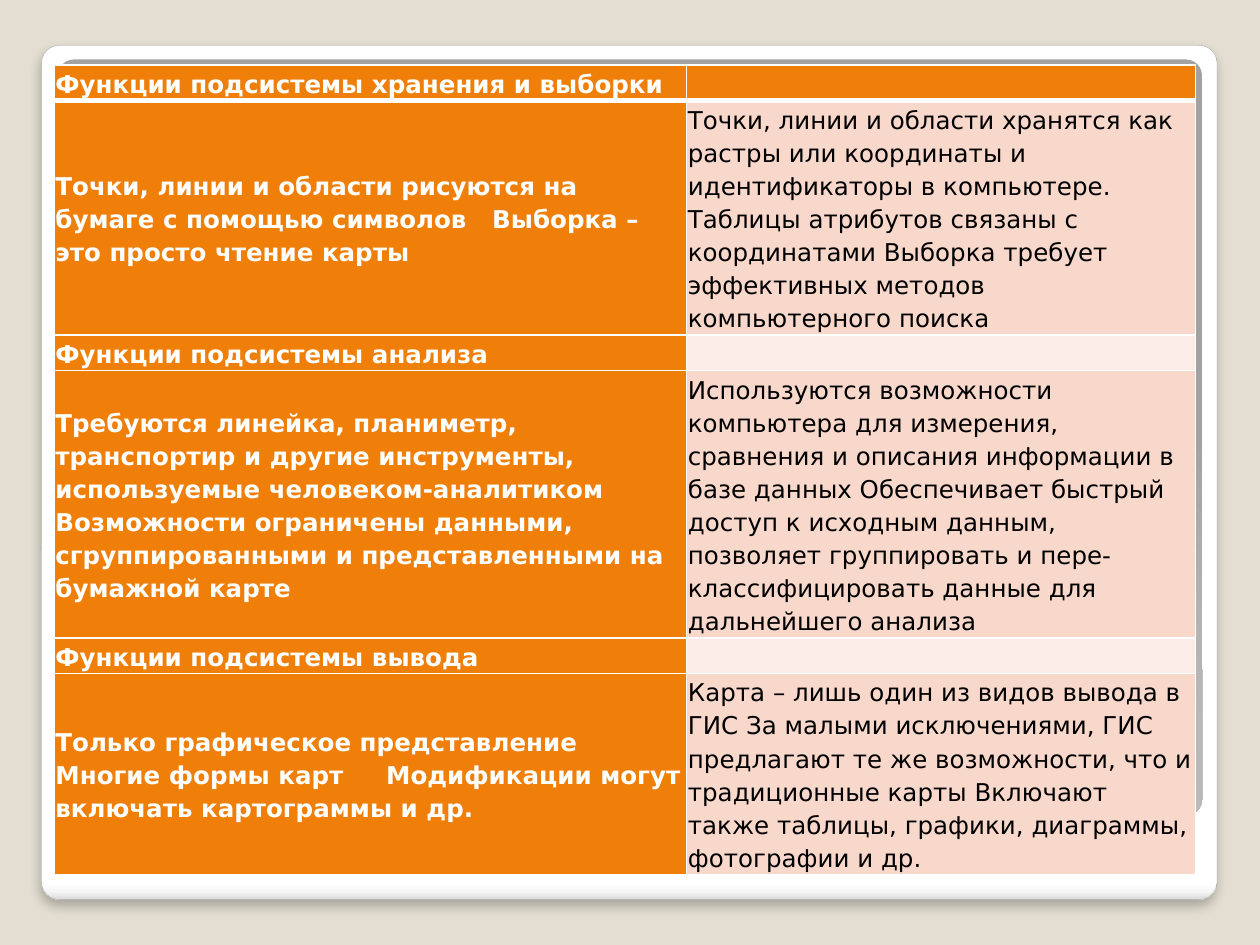
from lxml import etree
from pptx import Presentation
from pptx.dml.color import RGBColor
from pptx.enum.shapes import MSO_SHAPE
from pptx.enum.text import MSO_ANCHOR
from pptx.oxml import parse_xml
from pptx.oxml.ns import nsdecls, qn
from pptx.util import Inches, Pt

ROUND_RECT = MSO_SHAPE.ROUNDED_RECTANGLE
MIDDLE = MSO_ANCHOR.MIDDLE
BLANK_LAYOUT = 6
WIDTH, HEIGHT = 10, 7.5

SAND, ORANGE, ROSE, PALE = "E3DED1", "F07F09", "F9D8CC", "FCECE7"
WHITE, BLACK, GREY = "FFFFFF", "000000", "A4A4A4"

COLUMNS = [5.02, 4.04]
ROWS = [
    (0.27, "Функции подсистемы хранения и выборки", ""),
    (1.85, "Точки, линии и области рисуются на бумаге с помощью символов   Выборка – это "
           "просто чтение карты",
     "Точки, линии и области хранятся как растры или координаты и идентификаторы в "
     "компьютере. Таблицы атрибутов связаны с координатами Выборка требует эффективных "
     "методов компьютерного поиска"),
    (0.27, "Функции подсистемы анализа", ""),
    (2.11, "Требуются линейка, планиметр, транспортир и другие инструменты, используемые "
           "человеком-аналитиком Возможности ограничены данными, сгруппированными и "
           "представленными на бумажной карте",
     "Используются возможности компьютера для измерения, сравнения и описания информации "
     "в базе данных Обеспечивает быстрый доступ к исходным данным, позволяет группировать "
     "и пере-классифицировать данные для дальнейшего анализа"),
    (0.27, "Функции подсистемы вывода", ""),
    (1.58, "Только графическое представление Многие формы карт     Модификации могут "
           "включать картограммы и др.",
     "Карта – лишь один из видов вывода в ГИС За малыми исключениями, ГИС предлагают те же "
     "возможности, что и традиционные карты Включают также таблицы, графики, диаграммы, "
     "фотографии и др."),
]


def rgb(value):
    return RGBColor.from_string(value)


def set_all(target, values):
    for name, value in values.items():
        setattr(target, name, value)


class Deck:
    font = {"name": "DejaVu Sans", "size": Pt(14)}
    cell = {"vertical_anchor": MIDDLE, **{
        f"margin_{side}": Inches(0.01) for side in ("left", "right", "top", "bottom")}}

    def __init__(self):
        self.prs = Presentation()
        set_all(self.prs, {"slide_width": Inches(WIDTH), "slide_height": Inches(HEIGHT)})
        self.s = self.prs.slides.add_slide(self.prs.slide_layouts[BLANK_LAYOUT])
        fill = self.s.background.fill
        fill.solid()
        fill.fore_color.rgb = rgb(SAND)

    def box(self, x, y, w, h):
        """Turn shares of the slide's size into lengths."""
        return (Inches(x * WIDTH), Inches(y * HEIGHT), Inches(w * WIDTH), Inches(h * HEIGHT))

    def panel(self, box, stops, direction, line=None):
        sp = self.s.shapes.add_shape(ROUND_RECT, *self.box(*box))
        sp.adjustments[0] = 0.021
        sp.shadow.inherit = False
        if line:
            sp.line.color.rgb = rgb(line)
            sp.line.width = Pt(0.16)
        else:
            sp.line.fill.background()
        marks = "".join(f'<a:gs pos="{pos * 1000}"><a:srgbClr val="{color}"/></a:gs>'
                        for pos, color in stops)
        sp._element.spPr.find(qn("a:prstGeom")).addnext(parse_xml(
            f'<a:gradFill {nsdecls("a")}><a:gsLst>{marks}</a:gsLst>{direction}</a:gradFill>'))
        return sp

    def drop_shadow(self, sp, blur, distance, alpha):
        effects = sp._element.spPr.find(qn("a:effectLst"))
        effects.append(parse_xml(
            f'<a:outerShdw {nsdecls("a")} blurRad="{Pt(blur)}" dist="{Pt(distance)}" '
            f'dir="5400000" algn="t" rotWithShape="0"><a:srgbClr val="{BLACK}">'
            f'<a:alpha val="{alpha * 1000}"/></a:srgbClr></a:outerShdw>'))

    def borders(self, cell, widths):
        tcPr = cell._tc.get_or_add_tcPr()
        for i, (side, width) in enumerate(widths.items()):
            ln = etree.Element(qn(f"a:ln{side}"), w=str(Pt(width)))
            fill = etree.SubElement(ln, qn("a:solidFill"))
            etree.SubElement(fill, qn("a:srgbClr"), val=WHITE)
            tcPr.insert(i, ln)

    def fill_cell(self, cell, text, fill, color, bold):
        set_all(cell, self.cell)
        cell.fill.solid()
        cell.fill.fore_color.rgb = rgb(fill)
        p = cell.text_frame.paragraphs[0]
        p.line_spacing = 1.15
        set_all(p.font, self.font)
        if text:
            r = p.add_run()
            r.text = text
            set_all(r.font, {**self.font, "bold": bold})
            r.font.color.rgb = rgb(color)
        else:
            etree.SubElement(p._p, qn("a:endParaRPr"), sz="1400")

    def table(self, x, y, columns, rows):
        heights = [row[0] for row in rows]
        frame = self.s.shapes.add_table(
            len(rows), len(columns),
            *self.box(x, y, sum(columns) / WIDTH, sum(heights) / HEIGHT))
        tbl = frame.table
        for column, width in zip(tbl.columns, columns):
            column.width = Inches(width)
        for i, (height, *texts) in enumerate(rows):
            tbl.rows[i].height = Inches(height)
            for j, text in enumerate(texts):
                head = i == 0 or j == 0
                fill = ORANGE if head else ROSE if i % 2 else PALE
                cell = tbl.cell(i, j)
                self.fill_cell(cell, text, fill, WHITE if head else BLACK, head)
                self.borders(cell, {"L": 1, "R": 1, "T": 3 if i == 1 else 1,
                                    "B": 3 if i == 0 else 1})


def main():
    deck = Deck()
    card = deck.panel((0.033, 0.048, 0.933, 0.904),
                      [(0, WHITE), (98, WHITE), (99, "F7F7F7"), (100, "DADADA")],
                      '<a:lin ang="5400000" scaled="0"/>', GREY)
    deck.drop_shadow(card, blur=6, distance=4, alpha=25)
    deck.panel((0.046, 0.063, 0.908, 0.8),
               [(0, WHITE), (55, "E1E1E1"), (100, "A2A2A2")],
               '<a:path path="circle"><a:fillToRect l="50000" t="175000" r="50000" '
               'b="-75000"/></a:path>')
    deck.table(0.043, 0.069, COLUMNS, ROWS)
    deck.prs.save("out.pptx")


if __name__ == "__main__":
    main()
